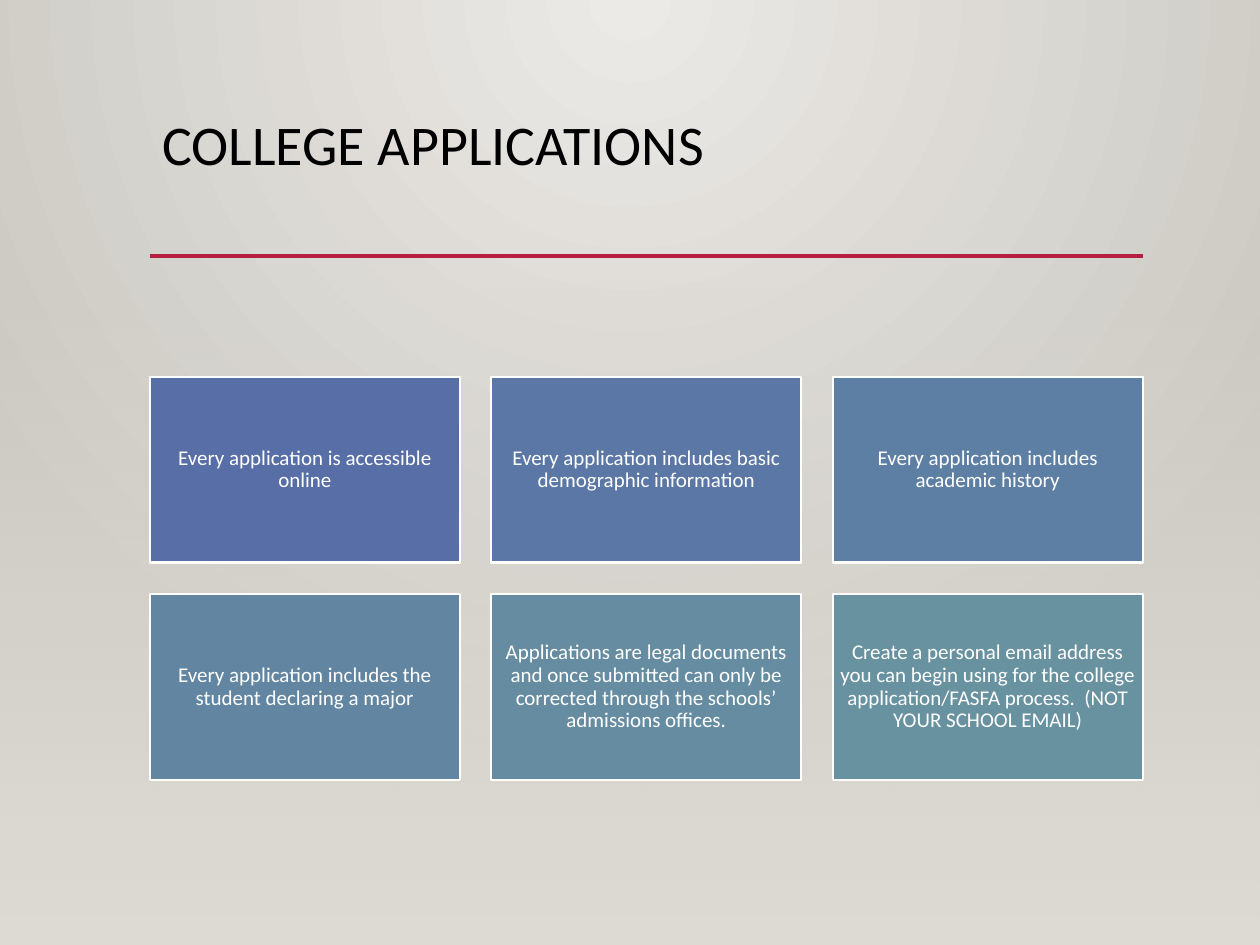
from lxml import etree
from pptx import Presentation
from pptx.dml.color import RGBColor
from pptx.enum.shapes import MSO_CONNECTOR, MSO_SHAPE
from pptx.enum.text import MSO_ANCHOR, PP_ALIGN
from pptx.oxml import parse_xml
from pptx.oxml.ns import nsdecls, qn
from pptx.util import Inches, Pt

FONT = "Calibri"
COLORS = {
    "glow": "ECEAE7",
    "edge": "CAC7C1",
    "floor": "DFDBD5",
    "rule": "B71E42",
    "title": "000000",
    "white": "FFFFFF",
}
CARDS = [
    ("586EA6", "Every application is accessible online"),
    ("5B77A5", "Every application includes basic demographic information"),
    ("5E7FA4", "Every application includes academic history"),
    ("6286A2", "Every application includes the student declaring a major"),
    ("658CA1", "Applications are legal documents and once submitted can only be "
               "corrected through the schools’ admissions offices."),
    ("6892A0", "Create a personal email address you can begin using for the college "
               "application/FASFA process.  (NOT YOUR SCHOOL EMAIL)"),
]
RADIAL = ('<a:path path="circle">'
          '<a:fillToRect l="43000" t="0" r="43000" b="100000"/></a:path>')
DOWNWARD = '<a:lin ang="5400000" scaled="0"/>'


def rgb(value):
    return RGBColor.from_string(value)


def set_gradient(fill, element, start, end, direction, start_alpha=100):
    fill.gradient()
    old = next(element.iter(qn("a:gradFill")))
    new = parse_xml(
        f'<a:gradFill {nsdecls("a")} rotWithShape="1"><a:gsLst>'
        f'<a:gs pos="0"><a:srgbClr val="{start}">'
        f'<a:alpha val="{start_alpha * 1000}"/></a:srgbClr></a:gs>'
        f'<a:gs pos="100000"><a:srgbClr val="{end}"/></a:gs>'
        f'</a:gsLst>{direction}</a:gradFill>')
    old.getparent().replace(old, new)


def add_rect(s, x, y, w, h):
    sp = s.shapes.add_shape(MSO_SHAPE.RECTANGLE, Inches(x), Inches(y),
                            Inches(w), Inches(h))
    sp.shadow.inherit = False
    return sp


def write(tf, text, size, color, align):
    tf.word_wrap = True
    p = tf.paragraphs[0]
    p.text = text
    p.alignment = align
    p.line_spacing = 0.9
    p.font.name = FONT
    p.font.size = Pt(size)
    p.font.color.rgb = rgb(color)


def add_backdrop(s, x, y, w, h):
    # Radial glow from the top centre
    glow = (COLORS["glow"], COLORS["edge"], RADIAL)
    set_gradient(s.background.fill, s.element, *glow)
    wall = add_rect(s, x, y, w, h)
    set_gradient(wall.fill, wall.element, *glow)
    wall.line.fill.background()

    # Lower part fades into a solid floor colour
    top = 2.21
    floor = add_rect(s, x, y + top, w, h - top)
    set_gradient(floor.fill, floor.element, COLORS["floor"], COLORS["floor"],
                 DOWNWARD, start_alpha=0)
    floor.line.fill.background()


def add_header(s, x, y, w, h):
    title = s.shapes.add_textbox(Inches(x), Inches(y), Inches(w), Inches(h))
    write(title.text_frame, "COLLEGE APPLICATIONS", 32, COLORS["title"], PP_ALIGN.LEFT)

    # Rule under the title
    rule = s.shapes.add_connector(MSO_CONNECTOR.STRAIGHT, Inches(x), Inches(y + h),
                                  Inches(x + w), Inches(y + h))
    rule.line.color.rgb = rgb(COLORS["rule"])
    rule.line.width = Pt(2.5)
    etree.SubElement(rule.element.spPr, qn("a:effectLst"))


def add_card(s, x, y, w, h, color, text):
    card = add_rect(s, x, y, w, h)
    card.fill.solid()
    card.fill.fore_color.rgb = rgb(color)
    card.line.color.rgb = rgb(COLORS["white"])
    card.line.width = Pt(1.25)
    tf = card.text_frame
    tf.margin_left = tf.margin_right = tf.margin_top = tf.margin_bottom = Inches(0.05)
    tf.vertical_anchor = MSO_ANCHOR.MIDDLE
    write(tf, text, 12, COLORS["white"], PP_ALIGN.CENTER)


def add_card_grid(s, x, y, w, h, columns=3, rows=2, gap=0.25):
    card_w = (w - gap * (columns - 1)) / columns
    card_h = (h - gap * (rows - 1)) / rows
    for i, (color, text) in enumerate(CARDS):
        row, column = divmod(i, columns)
        add_card(s, x + column * (card_w + gap), y + row * (card_h + gap),
                 card_w, card_h, color, text)


def main():
    prs = Presentation()
    prs.slide_width, prs.slide_height = Inches(10), Inches(7.5)
    s = prs.slides.add_slide(prs.slide_layouts[6])
    add_backdrop(s, 0, 0, 10, 7.5)
    add_header(s, 1.19, 0.88, 7.88, 1.15)
    add_card_grid(s, 1.19, 2.99, 7.88, 3.2)
    prs.save("out.pptx")


if __name__ == "__main__":
    main()
